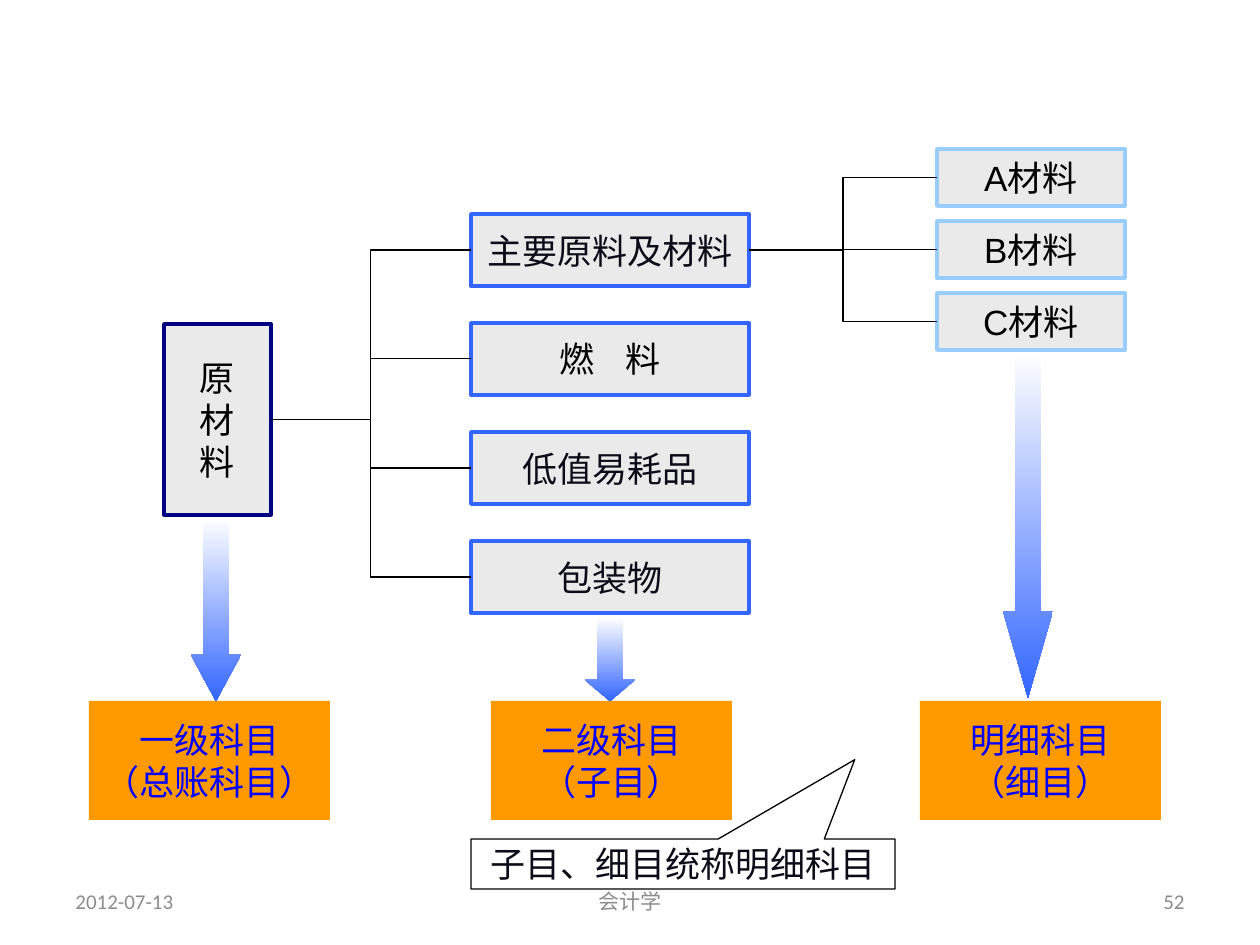
from dataclasses import dataclass

import pptx
import pptx.dml.color
import pptx.enum.shapes
import pptx.enum.text
import pptx.oxml
import pptx.oxml.ns
import pptx.shapes.autoshape
import pptx.slide
import pptx.text.text
import pptx.util

RGBColor = pptx.dml.color.RGBColor
Shape = pptx.shapes.autoshape.Shape
Slide = pptx.slide.Slide
Alignment = pptx.enum.text.PP_ALIGN
ShapeType = pptx.enum.shapes.MSO_SHAPE

PIXELS_PER_INCH = 126
BLACK = RGBColor(0x00, 0x00, 0x00)
WHITE = RGBColor(0xFF, 0xFF, 0xFF)
INK = RGBColor(0x0B, 0x0C, 0x17)
FOOTER_GRAY = RGBColor(0x8C, 0x8C, 0x8C)
BOX_GRAY = RGBColor(0xEA, 0xEA, 0xEA)
NAVY = RGBColor(0x00, 0x00, 0x80)
BLUE = RGBColor(0x33, 0x66, 0xFF)
LIGHT_BLUE = RGBColor(0x99, 0xCC, 0xFF)
TEXT_BLUE = RGBColor(0x00, 0x00, 0xFF)
ORANGE = RGBColor(0xFF, 0x99, 0x00)
CHINESE_FONT = "Noto Sans CJK SC"


@dataclass(frozen=True)
class Style:
    fill: RGBColor
    line: RGBColor | None
    font: str
    color: RGBColor
    line_width: float = 2


@dataclass(frozen=True)
class Area:
    left: int
    top: int
    width: int
    height: int


@dataclass(frozen=True)
class Box:
    text: str
    area: Area
    style: Style
    geometry: ShapeType = ShapeType.RECTANGLE


@dataclass(frozen=True)
class Arrow:
    area: Area
    head_ratio: float


@dataclass(frozen=True)
class Footer:
    text: str
    area: Area
    alignment: Alignment


ROOT_STYLE = Style(BOX_GRAY, NAVY, CHINESE_FONT, BLACK)
GROUP_STYLE = Style(BOX_GRAY, BLUE, "Calibri", INK)
FUEL_STYLE = Style(BOX_GRAY, BLUE, CHINESE_FONT, BLACK)
MATERIAL_STYLE = Style(BOX_GRAY, LIGHT_BLUE, "Arial", BLACK)
LEVEL_STYLE = Style(ORANGE, None, "Times New Roman", TEXT_BLUE)
NOTE_STYLE = Style(WHITE, BLACK, CHINESE_FONT, INK, 0.75)

ROOT = Box("原\n材\n料", Area(164, 324, 107, 191), ROOT_STYLE)
GROUPS = [
    Box(text, Area(471, 214 + 109 * row, 278, 72), style)
    for row, (text, style) in enumerate([
        ("主要原料及材料", GROUP_STYLE),
        ("燃 料", FUEL_STYLE),
        ("低值易耗品", GROUP_STYLE),
        ("包装物", GROUP_STYLE),
    ])
]
MATERIALS = [
    Box(f"{letter}材料", Area(937, 149 + 72 * row, 188, 57), MATERIAL_STYLE)
    for row, letter in enumerate("ABC")
]
LEVELS = [
    Box(text, Area(left, 701, 241, 119), LEVEL_STYLE)
    for left, text in [
        (89, "一级科目\n（总账科目）"),
        (491, "二级科目\n（子目）"),
        (920, "明细科目\n（细目）"),
    ]
]
NOTE = Box("子目、细目统称明细科目", Area(471, 839, 424, 50), NOTE_STYLE,
           ShapeType.RECTANGULAR_CALLOUT)
NOTE_TIP = (0.405, -2.086)
ARROWS = [
    Arrow(Area(191, 518, 50, 183), 0.92),
    Arrow(Area(585, 618, 50, 83), 0.42),
    Arrow(Area(1003, 353, 50, 345), 1.74),
]
FOOTERS = [
    Footer("2012-07-13", Area(63, 876, 294, 50), Alignment.LEFT),
    Footer("会计学", Area(431, 876, 399, 50), Alignment.CENTER),
    Footer("52", Area(903, 876, 294, 50), Alignment.RIGHT),
]


def px(length: int) -> int:
    return round(length * 914400 / PIXELS_PER_INCH)


def bounds(area: Area) -> tuple[int, int, int, int]:
    return px(area.left), px(area.top), px(area.width), px(area.height)


def write_text(shape: Shape, text: str, font: str, size: int, color: RGBColor,
               alignment: Alignment) -> None:
    frame = shape.text_frame
    frame.text = text
    frame.word_wrap = True
    frame.vertical_anchor = pptx.enum.text.MSO_ANCHOR.MIDDLE
    for paragraph in frame.paragraphs:
        paragraph.alignment = alignment
        for run in paragraph.runs:
            run.font.name = font
            run.font.size = pptx.util.Pt(size)
            run.font.color.rgb = color


def widen_space(paragraph: pptx.text.text._Paragraph, points: float) -> None:
    first = paragraph.runs[0]
    before, after = first.text.split(" ")
    first.text = before
    for text in (" ", after):
        run = paragraph.add_run()
        run.text = text
        run.font.name = first.font.name
        run.font.size = first.font.size
        run.font.color.rgb = first.font.color.rgb
        if text == " ":
            run.font._element.set("spc", str(round(points * 100)))


def draw_box(slide: Slide, box: Box) -> Shape:
    shape = slide.shapes.add_shape(box.geometry, *bounds(box.area))
    shape.shadow.inherit = False
    shape.fill.solid()
    shape.fill.fore_color.rgb = box.style.fill
    if box.style.line is None:
        shape.line.fill.background()
    else:
        shape.line.color.rgb = box.style.line
        shape.line.width = pptx.util.Pt(box.style.line_width)
    write_text(shape, box.text, box.style.font, 20, box.style.color, Alignment.CENTER)
    frame = shape.text_frame
    frame.margin_left = frame.margin_right = 0
    frame.margin_top = frame.margin_bottom = 0
    return shape


def join(slide: Slide, parent: Shape, child: Shape) -> None:
    connector = slide.shapes.add_connector(
        pptx.enum.shapes.MSO_CONNECTOR.ELBOW,
        parent.left + parent.width, parent.top + parent.height // 2,
        child.left, child.top + child.height // 2)
    connector.begin_connect(parent, 3)
    connector.end_connect(child, 1)
    connector.line.color.rgb = BLACK
    connector.line.width = pptx.util.Pt(0.63)
    properties = connector._element.spPr
    properties.append(pptx.oxml.parse_xml(f"<a:effectLst {pptx.oxml.ns.nsdecls('a')}/>"))


def draw_arrow(slide: Slide, arrow: Arrow) -> None:
    shape = slide.shapes.add_shape(ShapeType.DOWN_ARROW, *bounds(arrow.area))
    shape.shadow.inherit = False
    shape.adjustments[0] = 0.5
    shape.adjustments[1] = arrow.head_ratio
    shape.line.fill.background()
    shape.fill.gradient()
    shape.fill.gradient_angle = 270
    for stop, position, color in zip(shape.fill.gradient_stops, (0, 1), (WHITE, BLUE)):
        stop.position = position
        stop.color.rgb = color


def draw_footer(slide: Slide, footer: Footer) -> None:
    text_box = slide.shapes.add_textbox(*bounds(footer.area))
    write_text(text_box, footer.text, "Calibri", 12, FOOTER_GRAY, footer.alignment)


def main() -> None:
    presentation = pptx.Presentation()
    presentation.slide_width = pptx.util.Inches(10)
    presentation.slide_height = pptx.util.Inches(7.5)
    slide = presentation.slides.add_slide(presentation.slide_layouts[6])
    for footer in FOOTERS:
        draw_footer(slide, footer)
    root = draw_box(slide, ROOT)
    groups = [draw_box(slide, box) for box in GROUPS]
    materials = [draw_box(slide, box) for box in MATERIALS]
    widen_space(groups[1].text_frame.paragraphs[0], 13.5)
    for level in LEVELS:
        draw_box(slide, level)
    for parent, children in ((root, groups), (groups[0], materials)):
        for child in children:
            join(slide, parent, child)
    for arrow in ARROWS:
        draw_arrow(slide, arrow)
    note = draw_box(slide, NOTE)
    note.adjustments[0], note.adjustments[1] = NOTE_TIP
    presentation.save("out.pptx")


if __name__ == "__main__":
    main()
